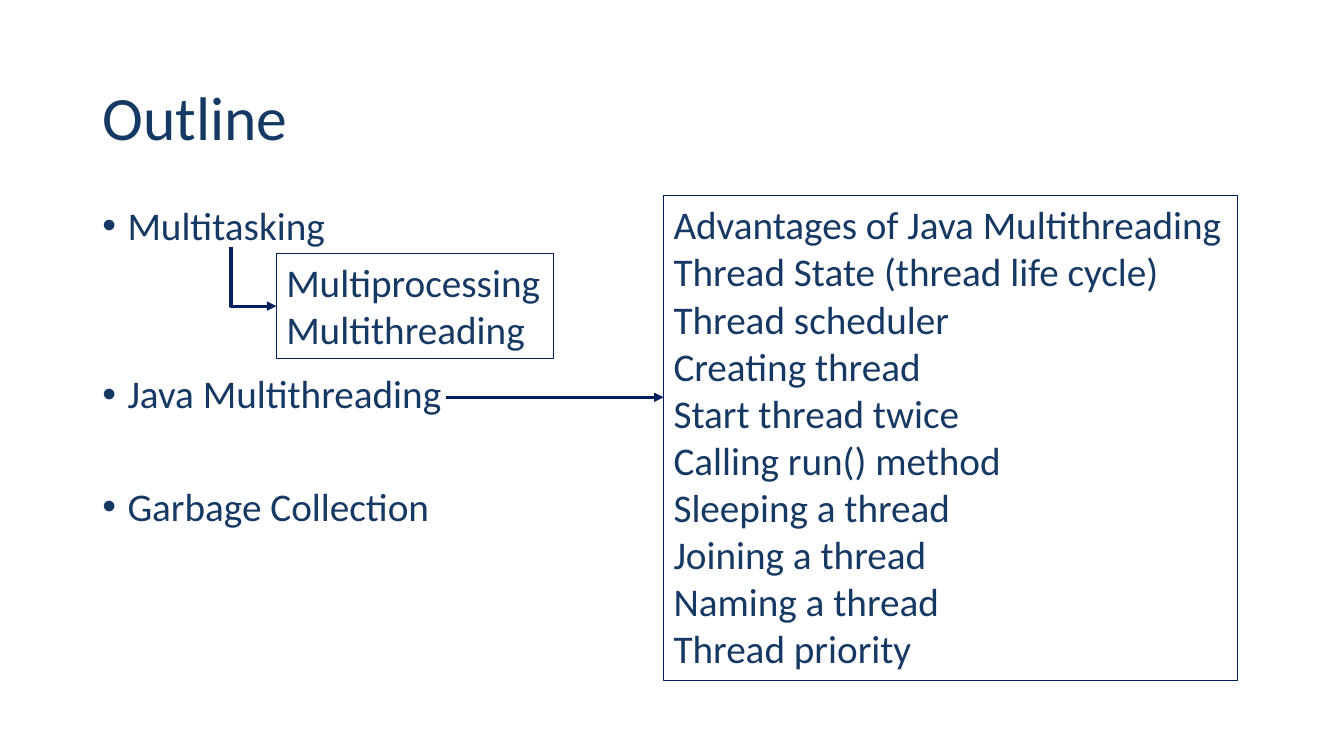
from dataclasses import dataclass

from lxml import etree
from pptx import Presentation
from pptx import util as u
from pptx.dml.color import RGBColor
from pptx.enum import shapes, text
from pptx.oxml import ns


@dataclass(frozen=True)
class Theme:
    """Colours, font and sizes of the deck."""
    ink: RGBColor = RGBColor(0x16, 0x39, 0x64)
    rule: RGBColor = RGBColor(0x00, 0x20, 0x60)
    font: str = "Calibri"
    head: int = 44
    body: int = 28
    frame: float = 1
    arrow: float = 2.25


@dataclass(frozen=True)
class Box:
    """An area in grid columns and rows."""
    x: float
    y: float
    w: float
    h: float


THEME = Theme()
COLS, ROWS = 160, 90
WIDE, HIGH = u.Inches(13.33), u.Inches(7.5)

TOPICS = [("Multitasking", 0), ("Java Multithreading", 90), ("Garbage Collection", 50)]
KINDS = ["Multiprocessing", "Multithreading"]
THREADS = [
    "Advantages of Java Multithreading",
    "Thread State (thread life cycle)",
    "Thread scheduler",
    "Creating thread",
    "Start thread twice",
    "Calling run() method",
    "Sleeping a thread",
    "Joining a thread",
    "Naming a thread",
    "Thread priority",
]


def col(n):
    """Turn grid columns into a length."""
    return round(WIDE * n / COLS)


def row(n):
    """Turn grid rows into a length."""
    return round(HIGH * n / ROWS)


def area(box):
    """Give left, top, width and height of a box."""
    return col(box.x), row(box.y), col(box.w), row(box.h)


def write(para, words, size=THEME.body, space=1.0, before=0, bullet=False):
    """Fill one paragraph with formatted text."""
    para.text = words
    para.alignment = text.PP_ALIGN.LEFT
    para.line_spacing = space
    para.space_before = u.Pt(before)
    if bullet:
        props = para._p.get_or_add_pPr()
        props.set("marL", str(u.Inches(0.25)))
        props.set("indent", str(-u.Inches(0.25)))
        etree.SubElement(props, ns.qn("a:buFont"), typeface="Arial")
        etree.SubElement(props, ns.qn("a:buChar"), char="•")
    font = para.runs[0].font
    font.name, font.size = THEME.font, u.Pt(size)
    font.color.rgb = THEME.ink


def stack(slide, box, items, **style):
    """Place a text box with one paragraph per item and its space before."""
    shape = slide.shapes.add_textbox(*area(box))
    frame = shape.text_frame
    frame.word_wrap = True
    for i, (words, before) in enumerate(items):
        para = frame.add_paragraph() if i else frame.paragraphs[0]
        write(para, words, before=before, **style)
    return shape


def heading(slide, box, words):
    """Move and format the title."""
    title = slide.shapes.title
    title.left, title.top, title.width, title.height = area(box)
    frame = title.text_frame
    frame.auto_size = text.MSO_AUTO_SIZE.NONE
    frame.vertical_anchor = text.MSO_ANCHOR.MIDDLE
    write(frame.paragraphs[0], words, size=THEME.head, space=0.9)


def panel(slide, box, lines):
    """Place a framed list."""
    shape = stack(slide, box, [(line, 0) for line in lines])
    shape.line.color.rgb = THEME.rule
    shape.line.width = u.Pt(THEME.frame)


def arrow(slide, kind, x1, y1, x2, y2):
    """Draw a connector with an arrowhead at its end."""
    link = slide.shapes.add_connector(kind, col(x1), row(y1), col(x2), row(y2))
    link.line.color.rgb = THEME.rule
    link.line.width = u.Pt(THEME.arrow)
    etree.SubElement(link.line._get_or_add_ln(), ns.qn("a:tailEnd"), type="triangle")
    etree.SubElement(link._element.spPr, ns.qn("a:effectLst"))
    return link


def elbow(slide, x1, y1, x2, y2):
    """Draw an arrow that runs down, then right."""
    mx, my = (x1 + x2) / 2, (y1 + y2) / 2
    dx, dy = (x2 - x1) / 2, (y2 - y1) / 2
    link = arrow(slide, shapes.MSO_CONNECTOR.ELBOW,
                 mx + dy, my - dx, mx - dy, my + dx)
    props = link._element.spPr
    props.find(ns.qn("a:prstGeom")).set("prst", "bentConnector2")
    props.find(ns.qn("a:xfrm")).set("rot", str(270 * 60000))


def outline(slide, box):
    """Lay out the topics, their detail panels and the arrows."""
    kinds = Box(box.x + 21.9, box.y + 6.2, 33, 12.5)
    threads = Box(box.x + 68, box.y - 0.7, 68.3, 57.7)
    stack(slide, Box(box.x, box.y, 68, box.h), TOPICS, space=0.9, bullet=True)
    panel(slide, kinds, KINDS)
    panel(slide, threads, THREADS)
    elbow(slide, box.x + 16.5, box.y + 5.4, kinds.x, kinds.y + kinds.h / 2)
    level = box.y + 23.3
    arrow(slide, shapes.MSO_CONNECTOR.STRAIGHT,
          box.x + 42.1, level, threads.x, level)


def main():
    """Build and save the deck."""
    deck = Presentation()
    deck.slide_width, deck.slide_height = WIDE, HIGH
    slide = deck.slides.add_slide(deck.slide_layouts[5])
    heading(slide, Box(11, 6.5, 138, 15.7), "Outline")
    outline(slide, Box(11, 24, 138, 57.1))
    deck.save("out.pptx")


if __name__ == "__main__":
    main()
